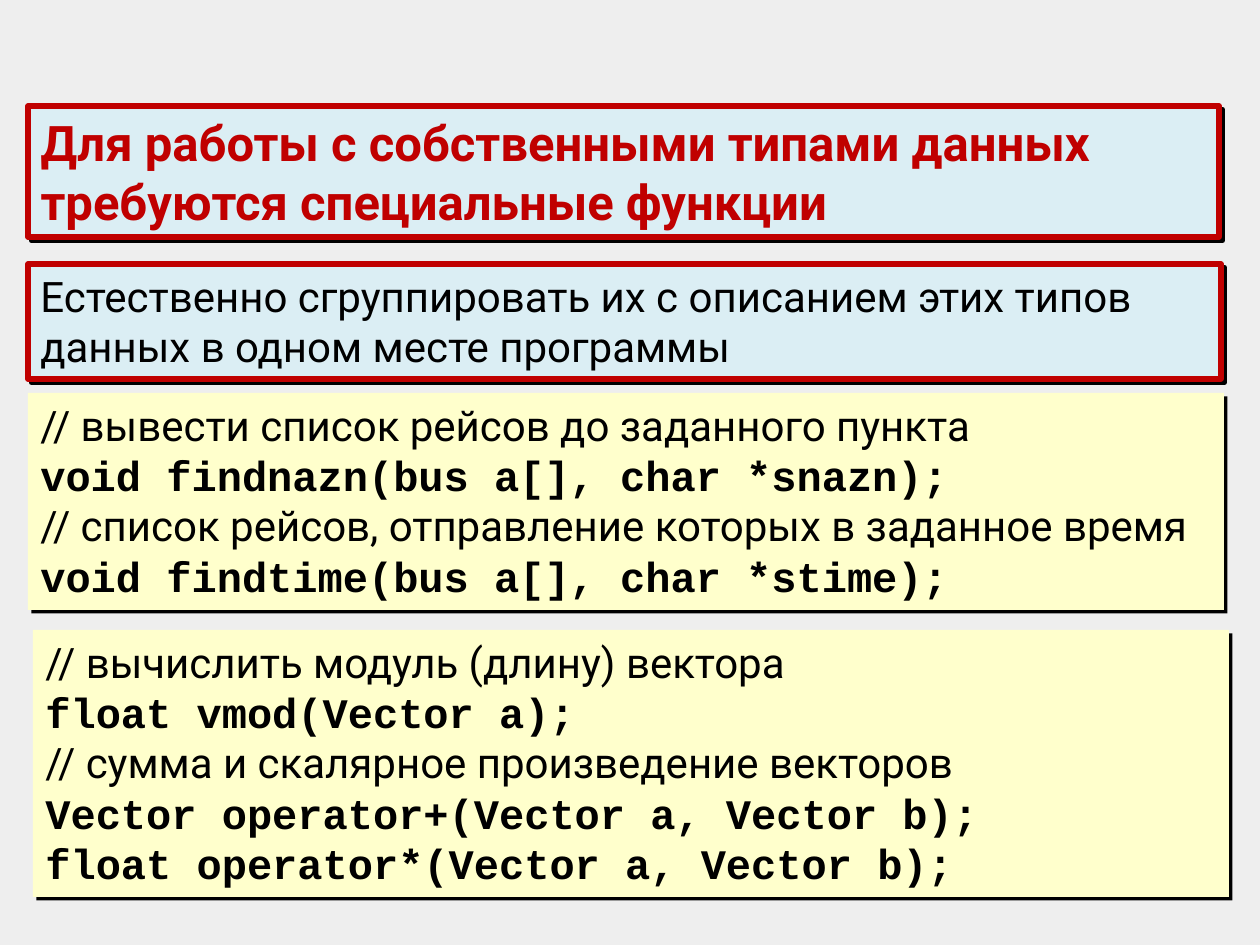
import dataclasses

import lxml.etree
import pptx
import pptx.dml.color
import pptx.enum.shapes
import pptx.enum.text
import pptx.oxml.ns
import pptx.util

PX = pptx.util.Inches(1) / 126


@dataclasses.dataclass(frozen=True)
class Theme:
    background: str = "EEEEEE"
    panel: str = "DBEEF4"
    code_panel: str = "FFFFCC"
    accent: str = "C00000"
    ink: str = "000000"
    prose_font: str = "Roboto"
    code_font: str = "Courier New"
    title_size: int = 28
    text_size: int = 24
    border: int = 3
    shadow_distance: float = 2.83


def rgb(value):
    return pptx.dml.color.RGBColor.from_string(value)


def px(value):
    return pptx.util.Emu(round(value * PX))


class SlideBuilder:
    def __init__(self, page, theme):
        self.page = page
        self.theme = theme
        fill = page.background.fill
        fill.solid()
        fill.fore_color.rgb = rgb(theme.background)

    def title(self, text, *place):
        box = self.page.shapes.title
        self.style(box, place, self.theme.panel, self.theme.accent)
        self.add_line(box.text_frame.paragraphs[0], text, self.theme.title_size,
                      self.theme.accent, bold=True)

    def statement(self, text, *place):
        box = self.rectangle(place, self.theme.panel, self.theme.accent)
        self.add_line(box.text_frame.paragraphs[0], text, self.theme.text_size,
                      self.theme.ink)

    def code(self, lines, *place):
        """Comments are set in the prose font, declarations in bold code."""
        box = self.rectangle(place, self.theme.code_panel)
        frame = box.text_frame
        for index, line in enumerate(lines):
            para = frame.add_paragraph() if index else frame.paragraphs[0]
            is_code = not line.startswith("//")
            font = self.theme.code_font if is_code else self.theme.prose_font
            self.add_line(para, line, self.theme.text_size, self.theme.ink,
                          font, is_code)

    def rectangle(self, place, fill, border=None):
        box = self.page.shapes.add_shape(
            pptx.enum.shapes.MSO_SHAPE.RECTANGLE, *map(px, place))
        self.style(box, place, fill, border)
        return box

    def style(self, box, place, fill, border=None):
        box.left, box.top, box.width, box.height = map(px, place)
        box.fill.solid()
        box.fill.fore_color.rgb = rgb(fill)
        if border:
            box.line.color.rgb = rgb(border)
            box.line.width = pptx.util.Pt(self.theme.border)
        else:
            box.line.fill.background()
        self.add_shadow(box)
        frame = box.text_frame
        frame.word_wrap = True
        frame.auto_size = pptx.enum.text.MSO_AUTO_SIZE.SHAPE_TO_FIT_TEXT
        frame.vertical_anchor = pptx.enum.text.MSO_ANCHOR.TOP

    def add_shadow(self, box):
        """Add a hard shadow to the lower right."""
        box.shadow.inherit = False
        qn = pptx.oxml.ns.qn
        effects = box.element.spPr.find(qn("a:effectLst"))
        shadow = lxml.etree.SubElement(
            effects, qn("a:outerShdw"), dir="2700000", algn="ctr", rotWithShape="0",
            dist=str(int(pptx.util.Pt(self.theme.shadow_distance))))
        lxml.etree.SubElement(shadow, qn("a:srgbClr"), val=self.theme.ink)

    def add_line(self, para, text, size, color, font=None, bold=False):
        para.alignment = pptx.enum.text.PP_ALIGN.LEFT
        span = para.add_run()
        span.text = text
        span.font.name = font or self.theme.prose_font
        span.font.size = pptx.util.Pt(size)
        span.font.bold = bold
        span.font.color.rgb = rgb(color)


def main():
    deck = pptx.Presentation()
    deck.slide_width = pptx.util.Inches(10)
    deck.slide_height = pptx.util.Inches(7.5)
    title_only = deck.slide_layouts.get_by_name("Title Only")
    slide = SlideBuilder(deck.slides.add_slide(title_only), Theme())

    slide.title("Для работы с собственными типами данных требуются "
                "специальные функции", 28, 106, 1191, 131)
    slide.statement("Естественно сгруппировать их с описанием этих типов "
                    "данных в одном месте программы", 28, 264, 1193, 115)
    slide.code([
        "// вывести список рейсов до заданного пункта",
        "void findnazn(bus a[], char *snazn);",
        "// список рейсов, отправление которых в заданное время",
        "void findtime(bus a[], char *stime);",
    ], 28, 393, 1196, 217)
    slide.code([
        "// вычислить модуль (длину) вектора",
        "float vmod(Vector a);",
        "// сумма и скалярное произведение векторов",
        "Vector operator+(Vector a, Vector b);",
        "float operator*(Vector a, Vector b);",
    ], 33, 630, 1196, 267)
    deck.save("out.pptx")


if __name__ == "__main__":
    main()
